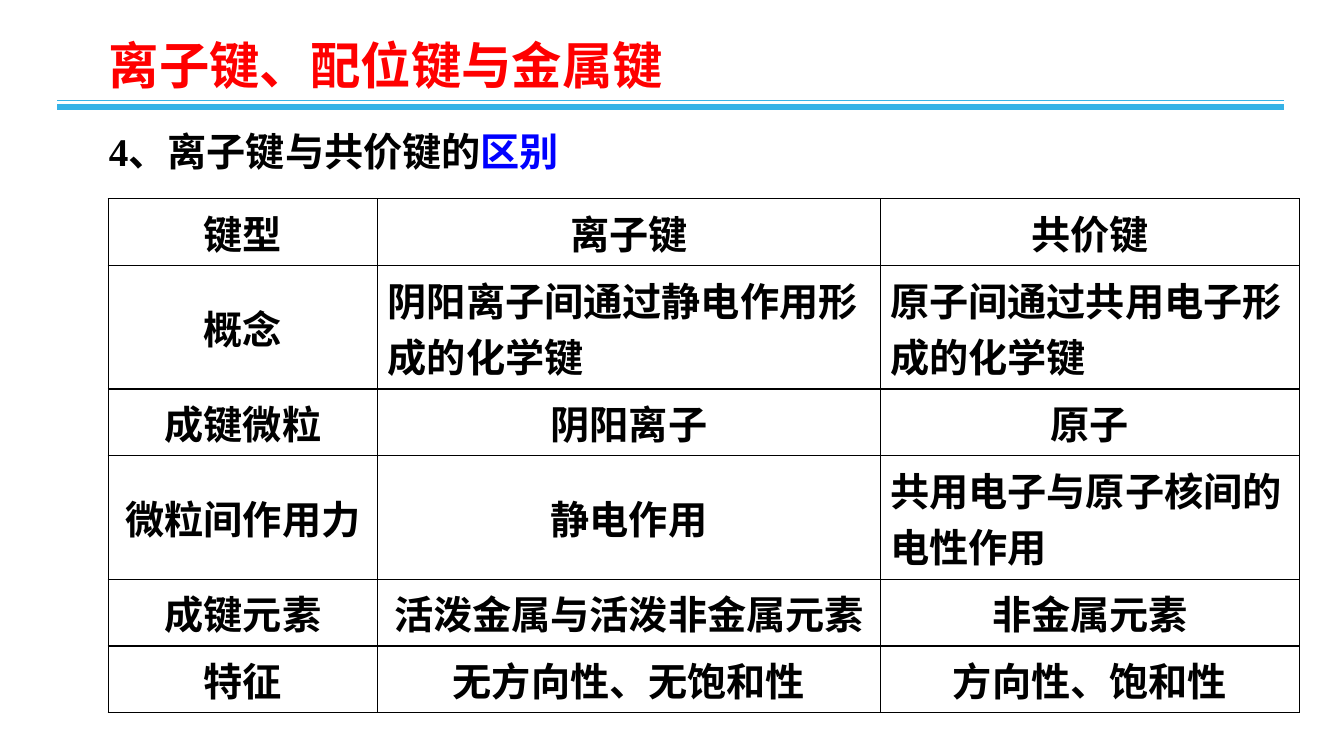
"""Builds a slide comparing ionic and covalent bonds in a table."""
from dataclasses import dataclass

from lxml import etree
from pptx import Presentation
from pptx.dml.color import RGBColor
from pptx.enum.shapes import MSO_CONNECTOR
from pptx.enum.text import MSO_ANCHOR, MSO_AUTO_SIZE, PP_ALIGN
from pptx.oxml.ns import qn
from pptx.util import Pt

STRAIGHT = MSO_CONNECTOR.STRAIGHT
MIDDLE = MSO_ANCHOR.MIDDLE
LEFT, CENTER = PP_ALIGN.LEFT, PP_ALIGN.CENTER
FIXED = MSO_AUTO_SIZE.NONE

BLACK = RGBColor(0x00, 0x00, 0x00)
RED = RGBColor(0xFF, 0x00, 0x00)
BLUE = RGBColor(0x00, 0x00, 0xFF)
SKY = RGBColor(0x36, 0xB2, 0xE6)

SANS = "Noto Sans CJK SC"
SERIF = "Times New Roman"

COLS = (192.5, 358.9, 299.8)
LOW, HIGH = 47.7, 88.2


@dataclass(frozen=True)
class Rule:
    top: float
    width: float


@dataclass(frozen=True)
class Row:
    height: float
    texts: tuple[str, str, str]
    left: tuple[int, ...] = ()


RULES = (Rule(72, 0.75), Rule(76.3, 4.5))

ROWS = (
    Row(LOW, ("键型", "离子键", "共价键")),
    Row(HIGH, ("概念", "阴阳离子间通过静电作用形成的化学键",
               "原子间通过共用电子形成的化学键"), (1, 2)),
    Row(LOW, ("成键微粒", "阴阳离子", "原子")),
    Row(HIGH, ("微粒间作用力", "静电作用", "共用电子与原子核间的电性作用"), (2,)),
    Row(LOW, ("成键元素", "活泼金属与活泼非金属元素", "非金属元素")),
    Row(LOW, ("特征", "无方向性、无饱和性", "方向性、饱和性")),
)


def style(run, size: float, face: str, color: RGBColor) -> None:
    font = run.font
    font.size, font.name, font.bold = Pt(size), face, True
    font.color.rgb = color
    east = etree.SubElement(run._r.get_or_add_rPr(), qn("a:ea"))
    east.set("typeface", SANS)


def draw_rule(slide, rule: Rule) -> None:
    line = slide.shapes.add_connector(
        STRAIGHT, Pt(41), Pt(rule.top), Pt(917.3), Pt(rule.top))
    line.line.color.rgb = SKY
    line.line.width = Pt(rule.width)
    etree.SubElement(line._element.spPr, qn("a:effectLst"))


def draw_topic(slide) -> None:
    box = slide.shapes.add_textbox(Pt(70.6), Pt(20.9), Pt(495.4), Pt(51.1))
    box.text_frame.word_wrap = True
    box.text_frame.text = "离子键、配位键与金属键"
    style(box.text_frame.paragraphs[0].runs[0], 36, SANS, RED)


def draw_title(slide) -> None:
    title = slide.shapes.title
    title.left, title.top = Pt(70.6), Pt(80.6)
    title.width, title.height = Pt(374.4), Pt(54)
    frame = title.text_frame
    frame.auto_size, frame.vertical_anchor = FIXED, MIDDLE
    frame.word_wrap = True
    frame.text = "4、离子键与共价键的"
    para = frame.paragraphs[0]
    para.alignment = LEFT
    para.add_run().text = "区别"
    for run, color in zip(para.runs, (BLACK, BLUE)):
        style(run, 28, SERIF, color)


def add_border(cell) -> None:
    props = cell._tc.get_or_add_tcPr()
    for place, side in enumerate(("lnL", "lnR", "lnT", "lnB")):
        edge = etree.Element(qn(f"a:{side}"), w=str(Pt(1)))
        fill = etree.SubElement(edge, qn("a:solidFill"))
        etree.SubElement(fill, qn("a:srgbClr"), val=str(BLACK))
        props.insert(place, edge)


def fill_cell(cell, text: str, align: PP_ALIGN) -> None:
    cell.fill.background()
    cell.vertical_anchor = MIDDLE
    cell.text_frame.text = text
    para = cell.text_frame.paragraphs[0]
    para.alignment = align
    style(para.runs[0], 28, SERIF, BLACK)
    add_border(cell)


def draw_table(slide) -> None:
    height = sum(row.height for row in ROWS)
    table = slide.shapes.add_table(
        len(ROWS), len(COLS), Pt(77.3), Pt(142), Pt(sum(COLS)), Pt(height)).table
    table.first_row = table.horz_banding = False
    for col, width in zip(table.columns, COLS):
        col.width = Pt(width)
    for r, row in enumerate(ROWS):
        table.rows[r].height = Pt(row.height)
        for c, text in enumerate(row.texts):
            fill_cell(table.cell(r, c), text, LEFT if c in row.left else CENTER)


def main() -> None:
    deck = Presentation()
    deck.slide_width, deck.slide_height = Pt(960), Pt(540)
    slide = deck.slides.add_slide(deck.slide_layouts[5])
    for rule in RULES:
        draw_rule(slide, rule)
    draw_topic(slide)
    draw_title(slide)
    draw_table(slide)
    deck.save("out.pptx")


if __name__ == "__main__":
    main()
